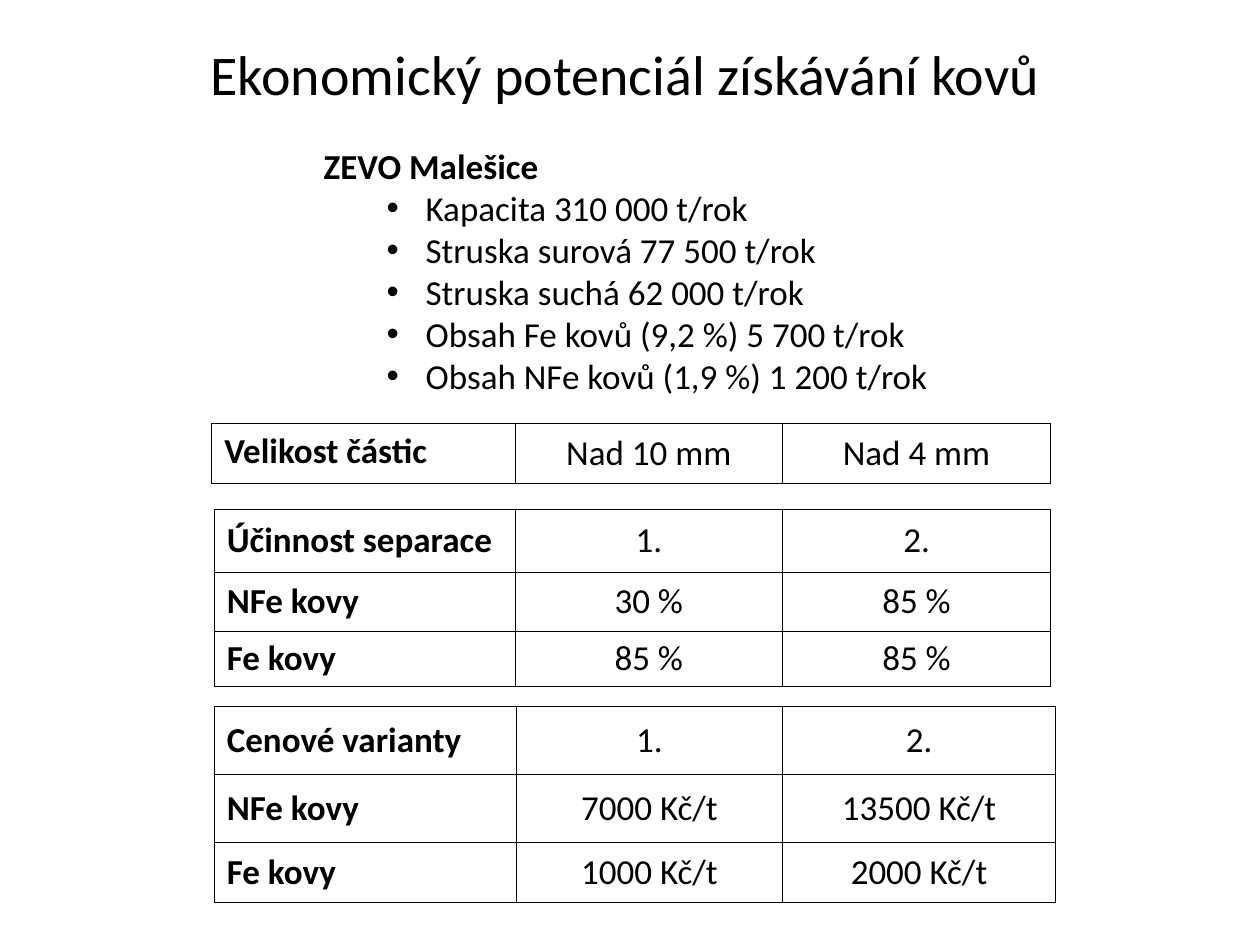
from pptx import Presentation
from pptx.dml.color import RGBColor
from pptx.enum.text import MSO_ANCHOR as Anchor, MSO_AUTO_SIZE as AutoSize, PP_ALIGN as Align
from pptx.oxml.ns import qn
from pptx.util import Inches, Pt
from lxml.etree import SubElement

FONT = "Calibri"
BLACK, WHITE = "000000", "FFFFFF"
BORDER_WIDTH = 0.5

PLANT = "ZEVO Malešice"
PLANT_FACTS = [
    "Kapacita 310 000 t/rok",
    "Struska surová 77 500 t/rok",
    "Struska suchá 62 000 t/rok",
    "Obsah Fe kovů (9,2 %) 5 700 t/rok",
    "Obsah NFe kovů (1,9 %) 1 200 t/rok",
]

# Each table: left, top, column widths, row heights, cell texts
PARTICLE_SIZE = (1.68, 3.36, [2.41, 2.12, 2.13], [0.48],
                 [["Velikost částic", "Nad 10 mm", "Nad 4 mm"]])
EFFICIENCY = (1.7, 4.04, [2.39, 2.12, 2.13], [0.5, 0.47, 0.43],
              [["Účinnost separace", "1.", "2."],
               ["NFe kovy", "30 %", "85 %"],
               ["Fe kovy", "85 %", "85 %"]])
PRICES = (1.7, 5.61, [2.4, 2.11, 2.17], [0.54, 0.54, 0.47],
          [["Cenové varianty", "1.", "2."],
           ["NFe kovy", "7000 Kč/t", "13500 Kč/t"],
           ["Fe kovy", "1000 Kč/t", "2000 Kč/t"]])


def color(value):
    return RGBColor.from_string(value)


def write(para, text, size=20, bold=False, align=Align.LEFT):
    para.alignment = align
    span = para.add_run()
    span.text = text
    span.font.name = FONT
    span.font.size = Pt(size)
    span.font.bold = bold
    span.font.color.rgb = color(BLACK)


def fit_to_text(frame):
    frame.word_wrap = False
    frame.auto_size = AutoSize.SHAPE_TO_FIT_TEXT
    frame.vertical_anchor = Anchor.TOP


def add_bullet(para, indent=0.81, hanging=0.31):
    para.level = 1
    props = para._p.get_or_add_pPr()
    props.set("marL", str(Inches(indent)))
    props.set("indent", str(-Inches(hanging)))
    SubElement(props, qn("a:buFont"), typeface="Arial")
    SubElement(props, qn("a:buChar"), char="•")


def add_title(page, text):
    title = page.shapes.title
    title.left, title.top = Inches(1.57), Inches(0.26)
    title.width, title.height = Inches(6.85), Inches(0.64)
    fit_to_text(title.text_frame)
    write(title.text_frame.paragraphs[0], text, size=32)


def add_facts(page, heading, facts):
    box = page.shapes.add_textbox(Inches(2.47), Inches(1.1), Inches(5.04), Inches(2.12))
    frame = box.text_frame
    fit_to_text(frame)
    write(frame.paragraphs[0], heading, bold=True)
    for fact in facts:
        para = frame.add_paragraph()
        add_bullet(para)
        write(para, fact)


def add_borders(cell):
    """Draw a thin line on all four sides; lines must come before the fill."""
    props = cell._tc.get_or_add_tcPr()
    for side in ("lnL", "lnR", "lnT", "lnB"):
        line = SubElement(props, qn(f"a:{side}"), w=str(Pt(BORDER_WIDTH)))
        fill = SubElement(line, qn("a:solidFill"))
        SubElement(fill, qn("a:srgbClr"), val=BLACK)


def add_grid(page, left, top, widths, heights, rows):
    table = page.shapes.add_table(
        len(heights), len(widths), Inches(left), Inches(top),
        Inches(sum(widths)), Inches(sum(heights))).table
    table.first_row = table.horz_banding = False
    for column, width in zip(table.columns, widths):
        column.width = Inches(width)
    for row, height, texts in zip(table.rows, heights, rows):
        row.height = Inches(height)
        for index, (cell, text) in enumerate(zip(row.cells, texts)):
            is_label = index == 0
            add_borders(cell)
            cell.fill.solid()
            cell.fill.fore_color.rgb = color(WHITE)
            cell.vertical_anchor = Anchor.MIDDLE
            write(cell.text_frame.paragraphs[0], text, bold=is_label,
                  align=Align.LEFT if is_label else Align.CENTER)
    return table


def main():
    deck = Presentation()
    deck.slide_width, deck.slide_height = Inches(10), Inches(7.5)
    page = deck.slides.add_slide(deck.slide_layouts[5])
    add_title(page, "Ekonomický potenciál získávání kovů")
    add_facts(page, PLANT, PLANT_FACTS)
    particle_table = add_grid(page, *PARTICLE_SIZE)
    particle_table.cell(0, 0).vertical_anchor = Anchor.TOP
    add_grid(page, *PRICES)
    add_grid(page, *EFFICIENCY)
    deck.save("out.pptx")


if __name__ == "__main__":
    main()
